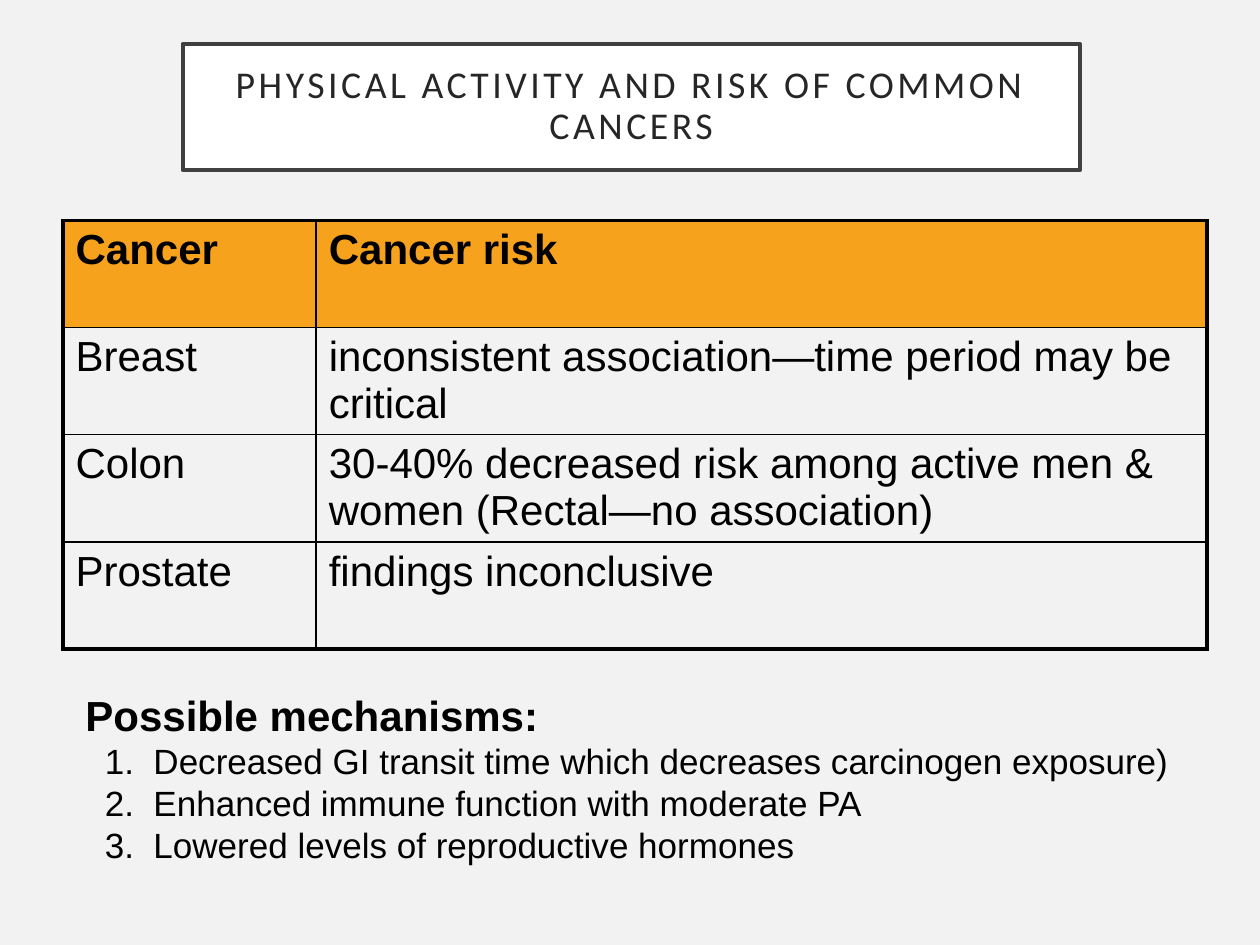
from dataclasses import dataclass

from lxml.etree import SubElement as Sub
from pptx import Presentation
from pptx.dml.color import RGBColor as Rgb
from pptx.enum.shapes import MSO_SHAPE as Kind
from pptx.enum.text import MSO_ANCHOR as Anchor, PP_ALIGN as Align
from pptx.oxml.ns import qn
from pptx.util import Inches, Pt

COLS, ROWS = 100, 75
WIDE, HIGH = Inches(10), Inches(7.5)


@dataclass(frozen=True)
class Theme:
    back: str = "F2F2F2"
    white: str = "FFFFFF"
    frame: str = "404040"
    title: str = "262626"
    ink: str = "000000"
    head: str = "F6A21D"
    sans: str = "Arial"
    caps: str = "Calibri"
    large: float = 24
    mid: float = 21.6
    small: float = 20
    thick: float = 2.25
    thin: float = 1


THEME = Theme()

RISKS = [
    ("Cancer", "Cancer risk"),
    ("Breast", "inconsistent association—time period may be critical"),
    ("Colon", "30-40% decreased risk among active men & women (Rectal—no association)"),
    ("Prostate", "findings inconclusive"),
]
CAUSES = [
    "Decreased GI transit time which decreases carcinogen exposure)",
    "Enhanced immune function with moderate PA",
    "Lowered levels of reproductive hormones",
]


def across(n):
    return int(WIDE * n / COLS)


def down(n):
    return int(HIGH * n / ROWS)


def place(x, y, w, h):
    return across(x), down(y), across(w), down(h)


def paint(fill, color):
    fill.solid()
    fill.fore_color.rgb = Rgb.from_string(color)


def style(para, size, bold=False, face=THEME.sans, color=THEME.ink):
    font = para.font
    font.name, font.size, font.bold = face, Pt(size), bold
    font.color.rgb = Rgb.from_string(color)


def add_title(slide, text, box):
    shape = slide.shapes.add_shape(Kind.RECTANGLE, *place(*box))
    shape.shadow.inherit = False
    paint(shape.fill, THEME.white)
    paint(shape.line.fill, THEME.frame)
    shape.line.width = Pt(2.5)
    frame = shape.text_frame
    frame.word_wrap = True
    frame.vertical_anchor = Anchor.MIDDLE
    frame.margin_left = frame.margin_right = across(2)
    frame.margin_top = frame.margin_bottom = down(2)
    para = frame.paragraphs[0]
    run = para.add_run()
    run.text = text
    run.font._element.set("spc", "200")
    para.alignment = Align.CENTER
    para.line_spacing = 0.9
    style(para, THEME.mid, face=THEME.caps, color=THEME.title)


def edge(cell, side, width):
    props = cell._tc.get_or_add_tcPr()
    line = Sub(props, qn(f"a:ln{side}"), w=str(Pt(width)))
    Sub(Sub(line, qn("a:solidFill")), qn("a:srgbClr"), val=THEME.ink)


def add_grid(slide, data, box, widths):
    last, end = len(data) - 1, len(widths) - 1
    shape = slide.shapes.add_table(len(data), len(widths), *place(*box))
    table = shape.table
    table.first_row = table.horz_banding = False
    for col, width in zip(table.columns, widths):
        col.width = across(width)
    for r, words in enumerate(data):
        for c, text in enumerate(words):
            cell = table.cell(r, c)
            cell.text = text
            style(cell.text_frame.paragraphs[0], THEME.large, bold=r == 0)
            outer = {"L": c == 0, "R": c == end, "T": r == 0, "B": r == last}
            for side, rim in outer.items():
                edge(cell, side, THEME.thick if rim else THEME.thin)
            if r == 0:
                paint(cell.fill, THEME.head)
            else:
                cell.fill.background()


def number(para):
    props = para._p.get_or_add_pPr()
    props.set("marL", str(across(5.4)))
    props.set("indent", str(-across(3.85)))
    Sub(props, qn("a:buFont"), typeface=THEME.sans)
    Sub(props, qn("a:buAutoNum"), type="arabicPeriod")


def add_list(slide, head, items, box):
    frame = slide.shapes.add_textbox(*place(*box)).text_frame
    frame.word_wrap = True
    para = frame.paragraphs[0]
    para.text = head
    style(para, THEME.large, bold=True)
    for item in items:
        para = frame.add_paragraph()
        para.text = item
        number(para)
        style(para, THEME.small)


def main():
    deck = Presentation()
    deck.slide_width, deck.slide_height = WIDE, HIGH
    slide = deck.slides.add_slide(deck.slide_layouts[6])
    paint(slide.background.fill, THEME.back)
    add_title(slide, "PHYSICAL ACTIVITY AND RISK OF COMMON CANCERS", (14.5, 3.5, 71.2, 10))
    add_grid(slide, RISKS, (5, 17.5, 90.8, 34), (20.1, 70.7))
    add_list(slide, "Possible mechanisms:", CAUSES, (5.8, 54.2, 91.7, 20))
    deck.save("out.pptx")


if __name__ == "__main__":
    main()
